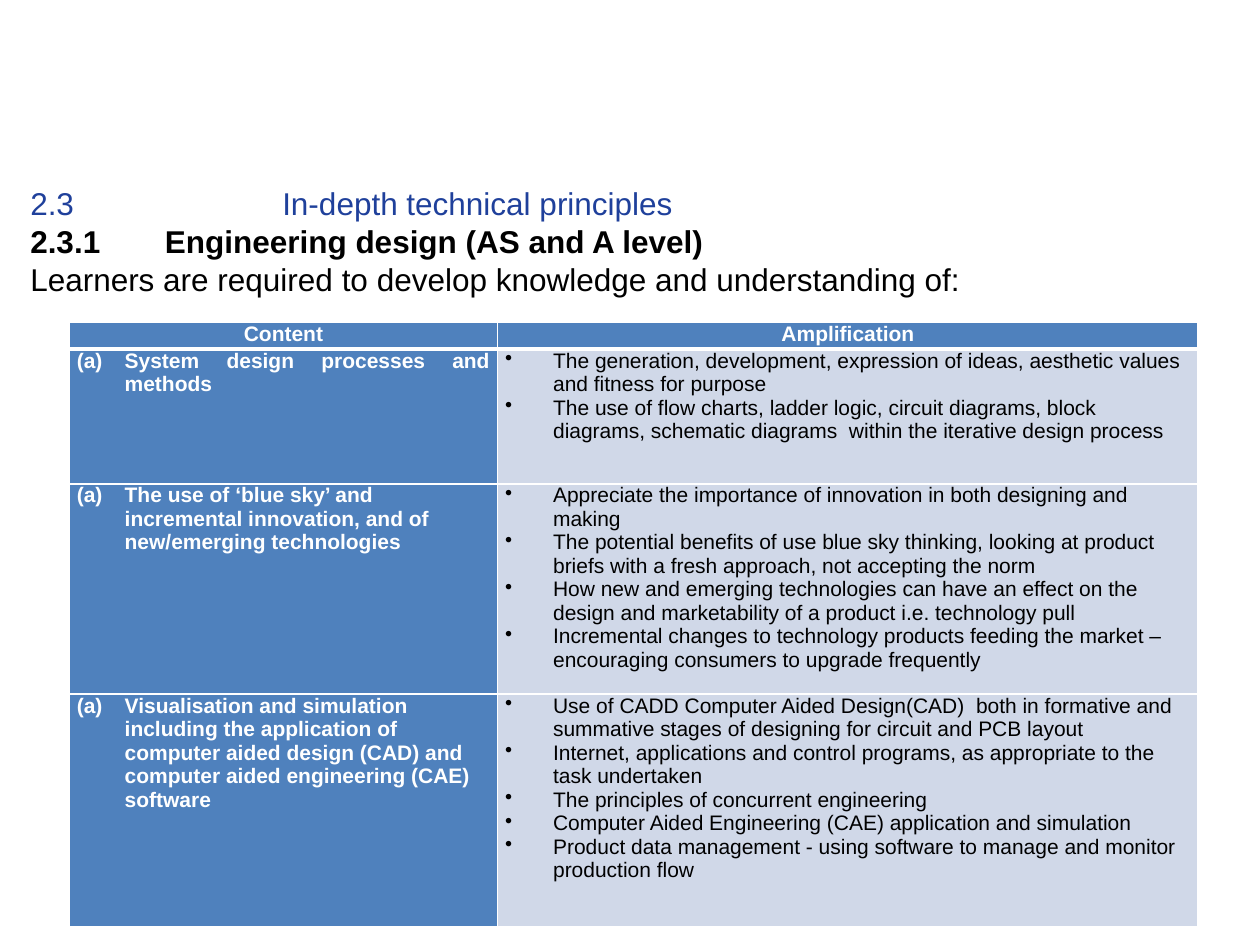
from pptx import Presentation
from pptx import util as u
from pptx.dml.color import RGBColor
from pptx.enum import text
from pptx.oxml.ns import qn
from lxml import etree

NAVY = RGBColor(0x1F, 0x40, 0x9B)
BLUE = RGBColor(0x4F, 0x81, 0xBD)
PALE = RGBColor(0xD0, 0xD8, 0xE8)
WHITE = RGBColor(0xFF, 0xFF, 0xFF)
BLACK = RGBColor(0, 0, 0)

HEADING = [
    ("2.3\t\tIn-depth technical principles", NAVY, False),
    ("2.3.1\t Engineering design (AS and A level)", BLACK, True),
    ("Learners are required to develop knowledge and understanding of:", BLACK, False),
]
ROWS = [
    ("System design processes and methods", [
        "The generation, development, expression of ideas, aesthetic values and fitness for purpose",
        "The use of flow charts, ladder logic, circuit diagrams, block diagrams, "
        "schematic diagrams  within the iterative design process",
    ]),
    ("The use of ‘blue sky’ and incremental innovation, and of new/emerging technologies", [
        "Appreciate the importance of innovation in both designing and making",
        "The potential benefits of use blue sky thinking, looking at product briefs "
        "with a fresh approach, not accepting the norm",
        "How new and emerging technologies can have an effect on the design and "
        "marketability of a product i.e. technology pull",
        "Incremental changes to technology products feeding the market – "
        "encouraging consumers to upgrade frequently",
    ]),
    ("Visualisation and simulation including the application of computer aided design (CAD) "
     "and computer aided engineering (CAE) software", [
        "Use of CADD Computer Aided Design(CAD)  both in formative and summative stages "
        "of designing for circuit and PCB layout",
        "Internet, applications and control programs, as appropriate to the task undertaken",
        "The principles of concurrent engineering",
        "Computer Aided Engineering (CAE) application and simulation",
        "Product data management - using software to manage and monitor production flow",
    ]),
]


def add_run(p, words, size, color, bold):
    r = p.add_run()
    r.text = words
    r.font.name = "Arial"
    r.font.size = u.Pt(size)
    r.font.color.rgb = color
    r.font.bold = bold


def fill_cell(cell, lines, fill, color, bold, bullet=None, bottom=1):
    cell.fill.solid()
    cell.fill.fore_color.rgb = fill
    cell.margin_left = cell.margin_right = u.Inches(0.06)
    cell.margin_top = cell.margin_bottom = 0
    tcPr = cell.fill._xPr
    for i, (side, width) in enumerate([("lnL", 1), ("lnR", 1), ("lnT", 1), ("lnB", bottom)]):
        ln = etree.Element(qn("a:" + side), w=str(u.Pt(width)))
        solid = etree.SubElement(ln, qn("a:solidFill"))
        etree.SubElement(solid, qn("a:srgbClr"), val=str(WHITE))
        tcPr.insert(i, ln)
    tf = cell.text_frame
    for i, line in enumerate(lines):
        p = tf.add_paragraph() if i else tf.paragraphs[0]
        if bullet:
            pPr = p._p.get_or_add_pPr()
            pPr.set("marL", str(u.Inches(0.38)))
            pPr.set("indent", str(-u.Inches(0.38)))
            tag, attributes = bullet
            etree.SubElement(pPr, qn(tag), attributes)
        else:
            p.alignment = text.PP_ALIGN.CENTER
        add_run(p, line, 12, color, bold)


prs = Presentation()
prs.slide_width, prs.slide_height = u.Inches(10), u.Inches(7.5)
s = prs.slides.add_slide(prs.slide_layouts[5])

title = s.shapes.title
title.left, title.top = u.Inches(0.14), u.Inches(0.81)
title.width, title.height = u.Inches(7.65), u.Inches(1.9)
tf = title.text_frame
tf.word_wrap = True
tf.auto_size = text.MSO_AUTO_SIZE.NONE
tf.vertical_anchor = text.MSO_ANCHOR.TOP
tf.margin_left = tf.margin_right = u.Inches(0.1)
tf.margin_top, tf.margin_bottom = u.Inches(0.65), u.Inches(0.04)
for i, (words, color, bold) in enumerate(HEADING):
    p = tf.add_paragraph() if i else tf.paragraphs[0]
    p.alignment = text.PP_ALIGN.LEFT
    tabs = etree.SubElement(p._p.get_or_add_pPr(), qn("a:tabLst"))
    for stop in (1, 2):
        etree.SubElement(tabs, qn("a:tab"), pos=str(u.Inches(stop)), algn="l")
    add_run(p, words, 18, color, bold)

table = s.shapes.add_table(len(ROWS) + 1, 2, u.Inches(0.55), u.Inches(2.56),
                           u.Inches(8.96), u.Inches(4.8)).table
for column, width in zip(table.columns, (3.4, 5.56)):
    column.width = u.Inches(width)
for row, height in zip(table.rows, (0.21, 1.07, 1.67, 1.85)):
    row.height = u.Inches(height)

for c, label in enumerate(("Content", "Amplification")):
    fill_cell(table.cell(0, c), [label], BLUE, WHITE, True, bottom=3)
LETTER = ("a:buAutoNum", {"type": "alphaLcParenBoth"})
DOT = ("a:buChar", {"char": "•"})
for n, (content, points) in enumerate(ROWS, 1):
    fill_cell(table.cell(n, 0), [content], BLUE, WHITE, True, LETTER)
    fill_cell(table.cell(n, 1), points, PALE, BLACK, False, DOT)
table.cell(1, 0).text_frame.paragraphs[0].alignment = text.PP_ALIGN.JUSTIFY

prs.save("out.pptx")
